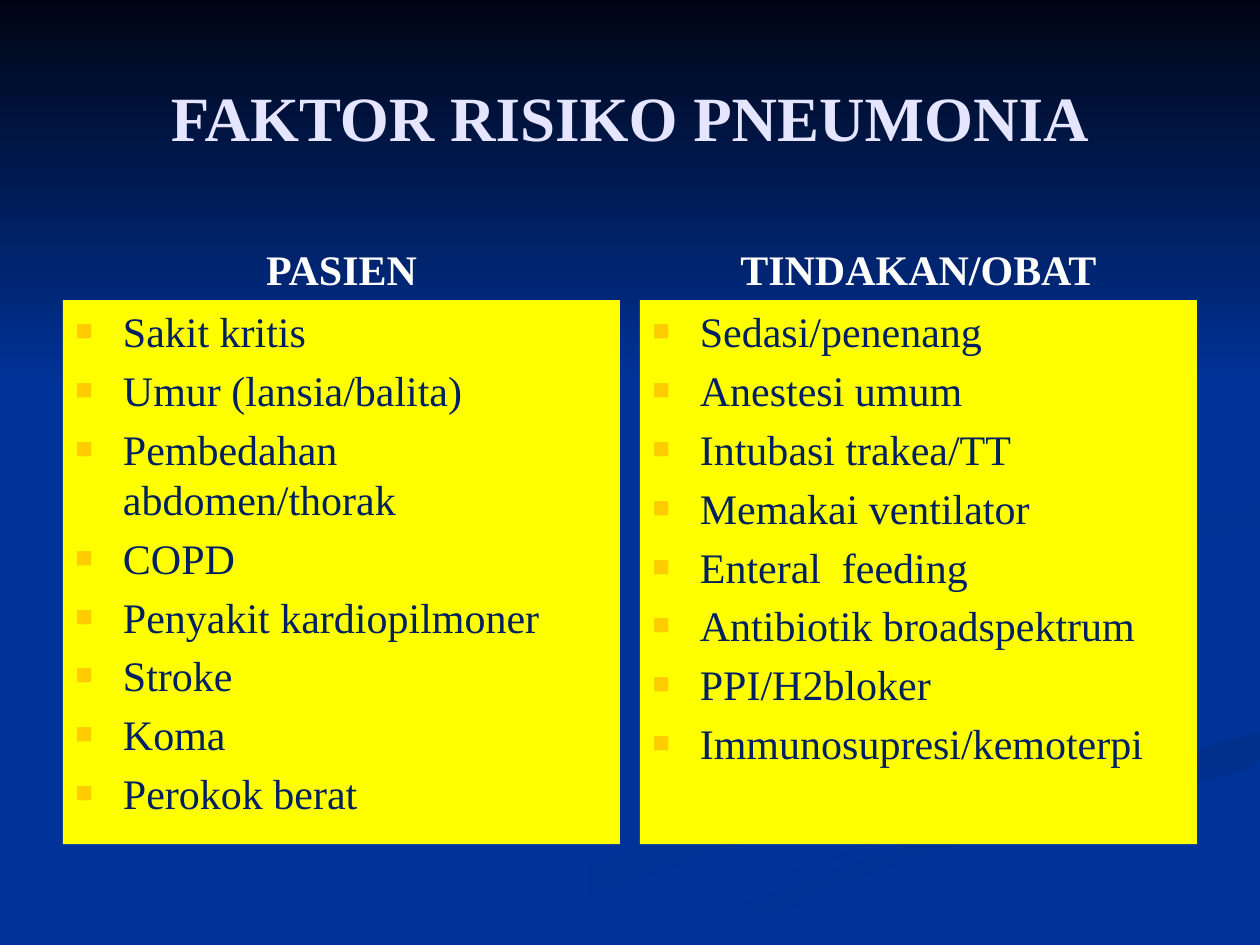
import typing

import lxml.etree
import pptx
import pptx.dml.color
import pptx.enum.shapes
import pptx.enum.text
import pptx.oxml.ns
import pptx.util

Cm = pptx.util.Cm
Pt = pptx.util.Pt
RGBColor = pptx.dml.color.RGBColor
ALIGN = pptx.enum.text.PP_ALIGN
ANCHOR = pptx.enum.text.MSO_ANCHOR

BLUE = RGBColor(0x00, 0x33, 0x99)
SHADE = RGBColor(0x00, 0x2F, 0x8C)
FAINT_SHADE = RGBColor(0x00, 0x31, 0x93)
NIGHT = RGBColor(0x00, 0x05, 0x14)
LAVENDER = RGBColor(0xE5, 0xE5, 0xFF)
WHITE = RGBColor(0xFF, 0xFF, 0xFF)
YELLOW = RGBColor(0xFF, 0xFF, 0x00)
NAVY = RGBColor(0x00, 0x20, 0x60)
AMBER = RGBColor(0xFF, 0xCC, 0x00)

WIDTH, HEIGHT = 25.4, 19.05
BANNER_HEIGHT = 7.82
MARGIN, GAP = 1.27, 0.4
CONTENT = WIDTH - 2 * MARGIN
COLUMN = (CONTENT - GAP) / 2
TITLE_TOP, TITLE_HEIGHT = 0.76, 3.18
HEADING_TOP, HEADING_HEIGHT = 4.27, 1.78
LIST_TOP, LIST_HEIGHT = 6.05, 10.97
BULLET_INDENT = Cm(0.96)
STEPS_PER_BEND = 6
UNITS_PER_CM = 100


class Bend(typing.NamedTuple):
    center: float
    y: float
    breadth: float


class Ribbon(typing.NamedTuple):
    first_color: RGBColor
    last_color: RGBColor
    angle: int
    bends: list


RIBBONS = [
    Ribbon(BLUE, FAINT_SHADE, 0, [
        Bend(14.6, 11.66, 0), Bend(16.7, 13.03, 0.2), Bend(20, 14.6, 0.55),
        Bend(16.6, 16, 2), Bend(8.4, 19.03, 1.55)]),
    Ribbon(SHADE, BLUE, 90, [
        Bend(25.35, 14.76, 0), Bend(24.1, 15.47, 2.3), Bend(17.5, 17.32, 1.6),
        Bend(13.65, 19.03, 1.73)]),
    Ribbon(BLUE, BLUE, 0, [
        Bend(25.38, 9.83, 0), Bend(21.6, 10.62, 2.4), Bend(19.1, 11.8, 1.42),
        Bend(21.6, 13.1, 1.93), Bend(24.6, 14.5, 1.42), Bend(21, 15.9, 0.76),
        Bend(12.45, 19.03, 0.66)]),
    Ribbon(SHADE, BLUE, 45, [
        Bend(25.35, 10.21, 0), Bend(23.9, 10.67, 2.8), Bend(20.25, 11.7, 0.86),
        Bend(20.98, 12.6, 0)]),
    Ribbon(SHADE, BLUE, 45, [
        Bend(19.35, 5.92, 0), Bend(22.63, 8.5, 0.1), Bend(20.1, 10.16, 1.9),
        Bend(14.88, 11.73, 0.46), Bend(15.8, 12.7, 0)]),
]

COLUMNS = {
    "PASIEN": [
        "Sakit kritis", "Umur (lansia/balita)", "Pembedahan abdomen/thorak",
        "COPD", "Penyakit kardiopilmoner", "Stroke", "Koma", "Perokok berat",
    ],
    "TINDAKAN/OBAT": [
        "Sedasi/penenang", "Anestesi umum", "Intubasi trakea/TT",
        "Memakai ventilator", "Enteral  feeding", "Antibiotik broadspektrum",
        "PPI/H2bloker", "Immunosupresi/kemoterpi",
    ],
}


def spline(before, start, end, after, t):
    return start + t / 2 * (
        end - before
        + t * (2 * before - 5 * start + 4 * end - after)
        + t * t * (3 * (start - end) + after - before))


def smooth(bends):
    padded = [bends[0], *bends, bends[-1]]
    curve = [
        Bend(*(spline(*values, step / STEPS_PER_BEND)
               for values in zip(*padded[index:index + 4])))
        for index in range(len(bends) - 1)
        for step in range(STEPS_PER_BEND)
    ]
    return curve + [bends[-1]]


def ribbon_edges(bends):
    curve = smooth(bends)
    left = [(bend.center - max(bend.breadth, 0) / 2, bend.y) for bend in curve]
    right = [(bend.center + max(bend.breadth, 0) / 2, bend.y) for bend in curve]
    return [(min(x, WIDTH) * UNITS_PER_CM, y * UNITS_PER_CM)
            for x, y in left + right[::-1]]


def write(paragraph, text, size=24, color=WHITE, bold=False, align=ALIGN.CENTER):
    paragraph.alignment = align
    run = paragraph.add_run()
    run.text = text
    run.font.name = "Times New Roman"
    run.font.size = Pt(size)
    run.font.bold = bold
    run.font.color.rgb = color


def add_bullet(paragraph):
    properties = paragraph._p.get_or_add_pPr()
    properties.set("marL", str(BULLET_INDENT))
    properties.set("indent", str(-BULLET_INDENT))

    def add(parent, tag, **attributes):
        return lxml.etree.SubElement(parent, pptx.oxml.ns.qn(tag), **attributes)

    add(add(properties, "a:buClr"), "a:srgbClr", val=str(AMBER))
    add(properties, "a:buSzPct", val="70000")
    add(properties, "a:buFont", typeface="Times New Roman")
    add(properties, "a:buChar", char="■")


class SlideBuilder:
    def __init__(self, slide):
        self.slide = slide
        slide.background.fill.solid()
        slide.background.fill.fore_color.rgb = BLUE

    def paint(self, shape, first_color, last_color=None, angle=0):
        shape.shadow.inherit = False
        shape.line.fill.background()
        if last_color in (None, first_color):
            shape.fill.solid()
            shape.fill.fore_color.rgb = first_color
            return
        shape.fill.gradient()
        shape.fill.gradient_angle = -angle % 360
        for stop, color in zip(shape.fill.gradient_stops, (first_color, last_color)):
            stop.color.rgb = color

    def ribbon(self, ribbon):
        start, *others = ribbon_edges(ribbon.bends)
        builder = self.slide.shapes.build_freeform(*start, scale=Cm(1) / UNITS_PER_CM)
        builder.add_line_segments(others, close=True)
        self.paint(builder.convert_to_shape(),
                   ribbon.first_color, ribbon.last_color, ribbon.angle)

    def rectangle(self, left, top, width, height, *paint):
        shape = self.slide.shapes.add_shape(
            pptx.enum.shapes.MSO_SHAPE.RECTANGLE, Cm(left), Cm(top), Cm(width), Cm(height))
        self.paint(shape, *paint)
        return shape

    def caption(self, text, left, top, width, height, anchor, **style):
        shape = self.slide.shapes.add_textbox(Cm(left), Cm(top), Cm(width), Cm(height))
        shape.text_frame.word_wrap = True
        shape.text_frame.vertical_anchor = anchor
        write(shape.text_frame.paragraphs[0], text, bold=True, **style)

    def bullet_list(self, items, left, top, width, height):
        frame = self.rectangle(left, top, width, height, YELLOW).text_frame
        frame.word_wrap = True
        frame.vertical_anchor = ANCHOR.TOP
        for index, item in enumerate(items):
            paragraph = frame.add_paragraph() if index else frame.paragraphs[0]
            write(paragraph, item, color=NAVY, align=ALIGN.LEFT)
            paragraph.line_spacing = Pt(28.6)
            paragraph.space_before = Pt(5)
            add_bullet(paragraph)


def main():
    presentation = pptx.Presentation()
    presentation.slide_width = Cm(WIDTH)
    presentation.slide_height = Cm(HEIGHT)
    builder = SlideBuilder(presentation.slides.add_slide(presentation.slide_layouts[6]))
    for ribbon in RIBBONS:
        builder.ribbon(ribbon)
    builder.rectangle(0, 0, WIDTH, BANNER_HEIGHT, NIGHT, BLUE, 90)
    builder.caption("FAKTOR RISIKO PNEUMONIA", MARGIN, TITLE_TOP, CONTENT, TITLE_HEIGHT,
                    ANCHOR.MIDDLE, size=36, color=LAVENDER)
    for index, (heading, items) in enumerate(COLUMNS.items()):
        left = MARGIN + index * (COLUMN + GAP)
        builder.caption(heading, left, HEADING_TOP, COLUMN, HEADING_HEIGHT, ANCHOR.BOTTOM)
        builder.bullet_list(items, left, LIST_TOP, COLUMN, LIST_HEIGHT)
    presentation.save("out.pptx")


if __name__ == "__main__":
    main()
